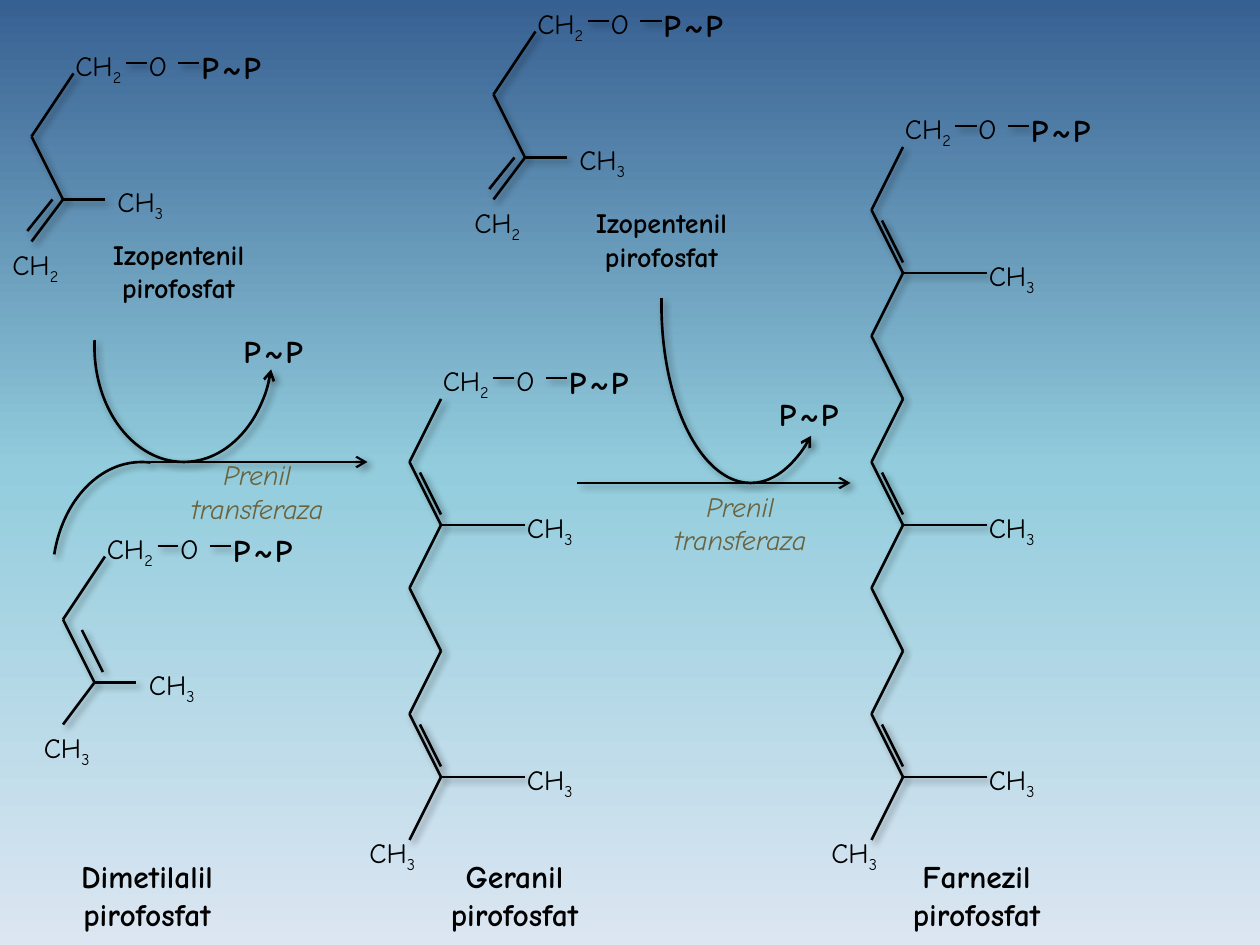
"""Build the slide on prenyl transferase condensations up to farnesyl pyrophosphate."""
import copy
from dataclasses import dataclass
from typing import Optional

import lxml.etree
import pptx
import pptx.dml.color
import pptx.enum.shapes
import pptx.enum.text
import pptx.oxml.ns
import pptx.util

qn = pptx.oxml.ns.qn
CELL = 2.54 / 12


@dataclass(frozen=True)
class Theme:
    """Colours, type sizes and line widths."""
    font: str = "Comic Neue"
    ink: str = "000000"
    enzyme: str = "6B633D"
    sky: tuple = ((0, "376092"), (0.5, "93CDDD"), (1, "DCE6F2"))
    small: int = 16
    large: int = 18
    bond: float = 1.5
    thin: float = 1.25


@dataclass(frozen=True)
class Prenyl:
    """Five-carbon pyrophosphate, placed by its leading CH2 group."""
    x: float
    y: float
    double: tuple
    end: str
    label: str
    label_at: tuple
    label_size: int


@dataclass(frozen=True)
class Chain:
    """Zigzag pyrophosphate built from prenyl units, placed by its left edge."""
    x: float
    top: float
    units: int
    label: str


@dataclass(frozen=True)
class Arc:
    """Curved reaction line with angles as shape adjustments."""
    box: tuple
    start: float
    end: float
    head: Optional[str] = None


T = Theme()

PRENYLS = (
    Prenyl(6, 4, (-1, 15, -3.4, 18), "2", "Izopentenil", (7, 22), T.small),
    Prenyl(9, 50, (-1.2, 10, 0.8, 14), "3", "Dimetilalil", (4, 81), T.large),
    Prenyl(50, 0, (-1, 15, -3.4, 18), "2", "Izopentenil", (53, 19), T.small),
)
CHAINS = (Chain(39, 38, 2, "Geranil"), Chain(83, 14, 3, "Farnezil"))
ARCS = (
    Arc((9, 22, 17, 22), 8.811, 110.482, "headEnd"),
    Arc((5, 44, 17, 22), 116.871, 164.628),
    Arc((63, 12, 17, 34), 39.172, 110.482, "headEnd"),
)
ARROWS = ((14, 44, 35, 44), (55, 46, 81, 46))
ENZYMES = ((15, 43), (61, 46))
RELEASED = ((22, 31), (73, 37))


def cells(*values: float) -> list:
    """Turn grid cells into lengths."""
    return [pptx.util.Cm(v * CELL) for v in values]


def rgb(value: str) -> pptx.dml.color.RGBColor:
    """Read a hex colour."""
    return pptx.dml.color.RGBColor.from_string(value)


def style_line(sp, width: float, arrow: Optional[str] = None) -> None:
    """Give a line its ink, optional arrowhead and soft shadow."""
    sp.line.color.rgb = rgb(T.ink)
    sp.line.width = pptx.util.Pt(width)
    pr = sp._element.spPr
    if arrow:
        lxml.etree.SubElement(pr.find(qn("a:ln")), qn(f"a:{arrow}"), type="arrow")
    effects = lxml.etree.SubElement(pr, qn("a:effectLst"))
    shadow = lxml.etree.SubElement(
        effects, qn("a:outerShdw"), blurRad=str(pptx.util.Pt(4)),
        dist=str(pptx.util.Pt(3)), dir=str(45 * 60000), rotWithShape="0")
    color = lxml.etree.SubElement(shadow, qn("a:srgbClr"), val=T.ink)
    lxml.etree.SubElement(color, qn("a:alpha"), val="40000")


def add_line(s, x1: float, y1: float, x2: float, y2: float,
             width: float = T.bond, arrow: Optional[str] = None) -> None:
    """Draw a straight bond or arrow."""
    kind = pptx.enum.shapes.MSO_CONNECTOR.STRAIGHT
    style_line(s.shapes.add_connector(kind, *cells(x1, y1, x2, y2)), width, arrow)


def add_run(p, text: str, size: int, color: str = T.ink,
            bold: bool = False, italic: bool = False):
    """Add one formatted run."""
    r = p.add_run()
    r.text = text
    r.font.name = T.font
    r.font.size = pptx.util.Pt(size)
    r.font.color.rgb = rgb(color)
    r.font.bold = bold
    r.font.italic = italic
    return r


def add_box(s, x: float, y: float, w: float, h: float, wrap: bool = True):
    """Add an empty text box and return its frame."""
    tf = s.shapes.add_textbox(*cells(x, y, w, h)).text_frame
    tf.word_wrap = wrap
    return tf


def add_group(s, x: float, y: float, count: str) -> None:
    """Write a CH group with its subscript."""
    p = add_box(s, x, y, 8, 4.4).paragraphs[0]
    add_run(p, "CH", T.small)
    r = add_run(p, count, T.small)
    r.font._element.set("baseline", "-25000")


def add_caption(s, x: float, y: float, w: float, h: float,
                lines: tuple, size: int, **look) -> None:
    """Write centred lines, one paragraph each."""
    tf = add_box(s, x, y, w, h)
    for i, line in enumerate(lines):
        p = tf.add_paragraph() if i else tf.paragraphs[0]
        p.alignment = pptx.enum.text.PP_ALIGN.CENTER
        add_run(p, line, size, **look)


def add_diphosphate(s, x: float, y: float) -> None:
    """Write P~P."""
    for dx, w, text in ((0, 4.1, "P"), (4, 4.1, "P"), (2, 4.3, "~")):
        p = add_box(s, x + dx, y, w, 4.8, wrap=False).paragraphs[0]
        add_run(p, text, T.large, bold=True)


def add_head(s, x: float, y: float) -> None:
    """Draw the CH2-O-P~P end of a molecule."""
    add_group(s, x, y, "2")
    add_run(add_box(s, x + 7, y, 4.5, 4.4, wrap=False).paragraphs[0], "O", T.small)
    add_diphosphate(s, x + 12, y)
    for dx in (6, 11):
        add_line(s, x + dx, y + 2, x + dx + 2, y + 2, T.thin)


def add_prenyl(s, m: Prenyl) -> None:
    """Draw a five-carbon molecule and its name."""
    x, y = m.x, m.y
    points = ((1, 3), (-3, 9), (0, 15), (-3, 19))
    for (x1, y1), (x2, y2) in zip(points, points[1:]):
        add_line(s, x + x1, y + y1, x + x2, y + y2)
    x1, y1, x2, y2 = m.double
    add_line(s, x + x1, y + y1, x + x2, y + y2)
    add_line(s, x, y + 15, x + 4, y + 15, T.thin)
    add_group(s, x + 4, y + 13, "3")
    add_group(s, x - 6, y + 19, m.end)
    add_head(s, x, y)
    add_caption(s, *m.label_at, 20, 9, (m.label, "pirofosfat"), m.label_size, bold=True)


def add_chain(s, m: Chain) -> None:
    """Draw a zigzag molecule and its name."""
    x, top = m.x, m.top
    points = [(x + 3 * (i % 2 == 0), top + 6 * i) for i in range(4 * m.units)]
    for start, end in zip(points, points[1:]):
        add_line(s, *start, *end)
    for y in range(top, top + 24 * m.units, 24):
        add_line(s, x + 1, y + 7, x + 3, y + 11)
        add_line(s, x + 3, y + 12, x + 11, y + 12, T.thin)
        add_group(s, x + 10, y + 10, "3")
    add_group(s, x - 5, top + 24 * m.units - 7, "3")
    add_head(s, x + 2, top - 4)
    add_caption(s, x, 81, 20, 9, (m.label, "pirofosfat"), T.large, bold=True)


def add_arc(s, arc: Arc) -> None:
    """Draw a curved reaction line."""
    sp = s.shapes.add_shape(pptx.enum.shapes.MSO_SHAPE.ARC, *cells(*arc.box))
    sp.adjustments[0], sp.adjustments[1] = arc.start, arc.end
    sp.fill.background()
    style_line(sp, T.bond, arc.head)


def paint_background(s) -> None:
    """Fill the background with the vertical gradient."""
    fill = s.background.fill
    fill.gradient()
    fill.gradient_angle = 270
    stops = s._element.find(".//" + qn("a:gsLst"))
    stops.append(copy.deepcopy(stops[-1]))
    for stop, (position, color) in zip(fill.gradient_stops, T.sky):
        stop.position = position
        stop.color.rgb = rgb(color)


def main() -> None:
    """Build and save the slide."""
    prs = pptx.Presentation()
    prs.slide_width, prs.slide_height = cells(120, 90)
    s = prs.slides.add_slide(prs.slide_layouts[6])
    paint_background(s)
    for m in PRENYLS:
        add_prenyl(s, m)
    for m in CHAINS:
        add_chain(s, m)
    for arrow in ARROWS:
        add_line(s, *arrow, T.thin, "tailEnd")
    for arc in ARCS:
        add_arc(s, arc)
    for at in ENZYMES:
        add_caption(s, *at, 19, 8, ("Prenil", "transferaza"), T.small,
                    color=T.enzyme, italic=True)
    for at in RELEASED:
        add_diphosphate(s, *at)
    prs.save("out.pptx")


if __name__ == "__main__":
    main()
